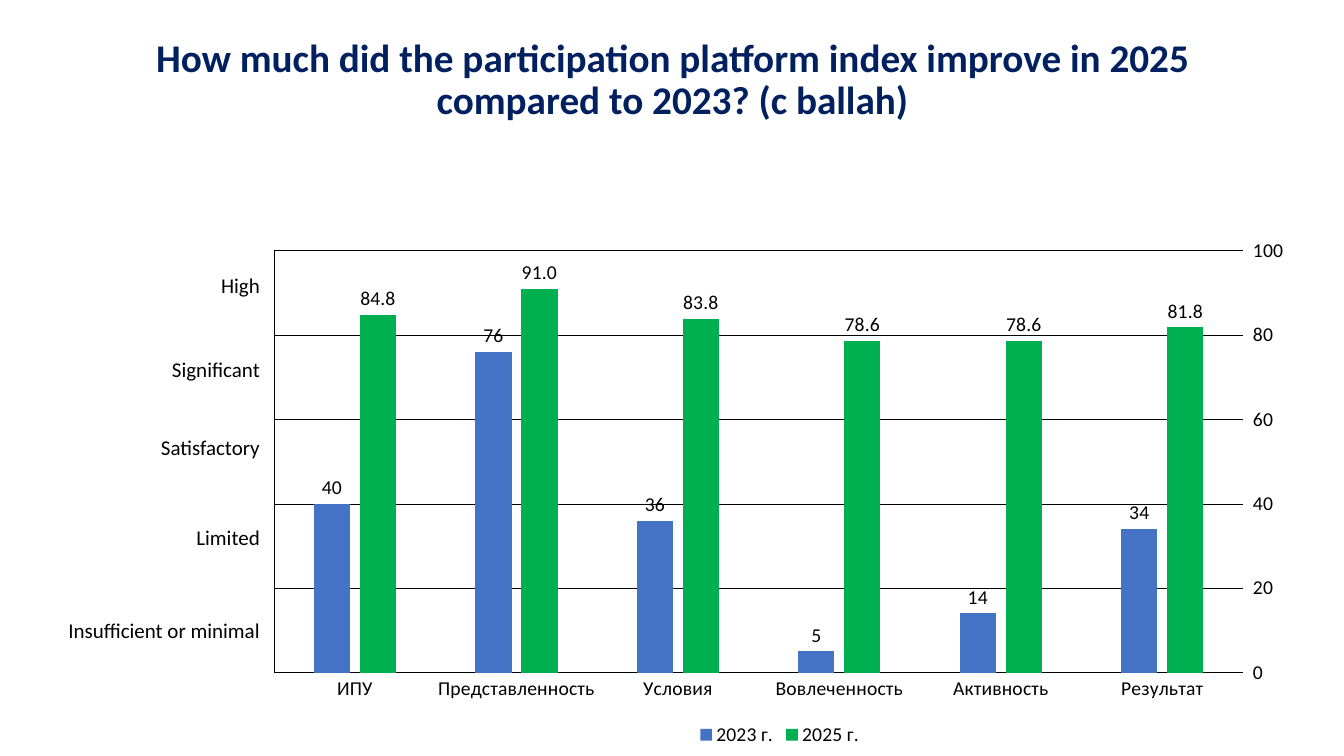
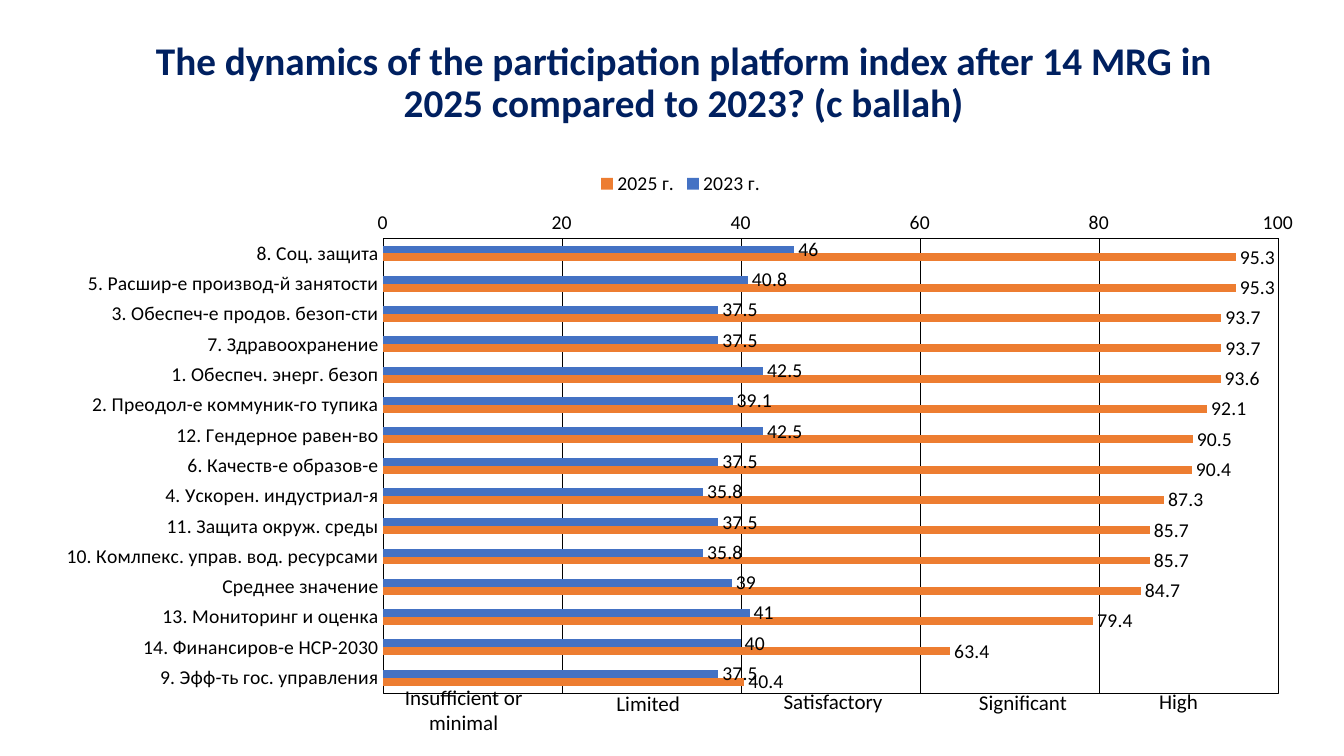
from dataclasses import dataclass

from lxml import etree
from pptx import Presentation
from pptx import util as u
from pptx.chart.data import CategoryChartData
from pptx.dml.color import RGBColor
from pptx.enum import chart as ch, shapes, text
from pptx.oxml import parse_xml
from pptx.oxml.ns import nsdecls, qn


@dataclass(frozen=True)
class Theme:
    font: str = "Calibri"
    title: str = "002060"
    ink: str = "000000"
    paper: str = "FFFFFF"
    blue: str = "4472C4"
    green: str = "00B050"
    orange: str = "ED7D31"
    title_size: int = 28
    band_size: int = 15
    chart_size: int = 14
    hairline: float = 0.25


THEME = Theme()
CENTER, RIGHT, LEFT = text.PP_ALIGN.CENTER, text.PP_ALIGN.RIGHT, text.PP_ALIGN.LEFT
LEVELS = ["Insufficient or minimal", "Limited", "Satisfactory", "Significant", "High"]


def style_font(font, size, color=THEME.ink, bold=False):
    font.name = THEME.font
    font.size = u.Pt(size)
    font.bold = bold
    font.color.rgb = RGBColor.from_string(color)


def write(shape, words, *, size, color=THEME.ink, bold=False, align=CENTER, spacing=None):
    frame = shape.text_frame
    frame.word_wrap = True
    frame.vertical_anchor = text.MSO_ANCHOR.MIDDLE
    paragraph = frame.paragraphs[0]
    paragraph.alignment = align
    paragraph.line_spacing = spacing
    run = paragraph.add_run()
    run.text = words
    style_font(run.font, size, color, bold)


def draw_line(line, width=THEME.hairline):
    line.color.rgb = RGBColor.from_string(THEME.ink)
    line.width = u.Pt(width)


def place_plot(chart, x, y, w, h, framed):
    """Fix the inner plot area as fractions of the chart, on a clear background."""
    plot_area = chart.element.find(".//" + qn("c:plotArea"))
    for old in plot_area.findall(qn("c:layout")):
        plot_area.remove(old)
    layout = etree.Element(qn("c:layout"))
    manual = etree.SubElement(layout, qn("c:manualLayout"))
    settings = dict(layoutTarget="inner", xMode="edge", yMode="edge", x=x, y=y, w=w, h=h)
    for tag, value in settings.items():
        etree.SubElement(manual, qn(f"c:{tag}")).set("val", str(value))
    plot_area.insert(0, layout)

    def clear_box(outline):
        return parse_xml(f'<c:spPr {nsdecls("c", "a")}><a:noFill/>{outline}</c:spPr>')

    no_line = "<a:ln><a:noFill/></a:ln>"
    border = (f'<a:ln w="{u.Pt(THEME.hairline)}"><a:solidFill>'
              f'<a:srgbClr val="{THEME.ink}"/></a:solidFill></a:ln>')
    plot_area.append(clear_box(border if framed else no_line))
    chart.element.find(qn("c:txPr")).addprevious(clear_box(no_line))


class Deck:
    def __init__(self):
        self.prs = Presentation()
        self.prs.slide_width, self.prs.slide_height = u.Cm(33.87), u.Cm(19.05)
        self.slide = None

    def new_slide(self, title, left, top):
        self.slide = self.prs.slides.add_slide(self.prs.slide_layouts[6])
        box = self.slide.shapes.add_textbox(u.Cm(left), u.Cm(top), u.Cm(29.21), u.Cm(3.68))
        write(box, title, size=THEME.title_size, color=THEME.title, bold=True, spacing=0.9)

    def level(self, words, left, top, width, height, align):
        box = self.slide.shapes.add_shape(
            shapes.MSO_SHAPE.RECTANGLE, *map(u.Cm, (left, top, width, height)))
        box.shadow.inherit = False
        box.fill.solid()
        box.fill.fore_color.rgb = RGBColor.from_string(THEME.paper)
        box.line.fill.background()
        write(box, words, size=THEME.band_size, align=align)

    def bars(self, kind, place, categories, series, *, plot_box, gap, overlap=0,
             legend, framed=False):
        """Each series is (name, values, colour, label number format)."""
        data = CategoryChartData()
        data.categories = categories
        for name, values, _, _ in series:
            data.add_series(name, values)
        chart = self.slide.shapes.add_chart(kind, *map(u.Cm, place), data).chart
        chart.has_title = False
        style_font(chart.font, THEME.chart_size)
        chart.has_legend = True
        chart.legend.position = legend
        chart.legend.include_in_layout = False
        style_font(chart.legend.font, THEME.chart_size)

        plot = chart.plots[0]
        plot.gap_width, plot.overlap, plot.vary_by_categories = gap, overlap, False
        for bar, (_, _, color, number_format) in zip(plot.series, series):
            bar.format.fill.solid()
            bar.format.fill.fore_color.rgb = RGBColor.from_string(color)
            labels = bar.data_labels
            labels.show_value = True
            labels.position = ch.XL_LABEL_POSITION.OUTSIDE_END
            labels.number_format = number_format
            labels.number_format_is_linked = False
            style_font(labels.font, THEME.chart_size)

        for axis in (chart.category_axis, chart.value_axis):
            axis.major_tick_mark = axis.minor_tick_mark = ch.XL_TICK_MARK.NONE
            style_font(axis.tick_labels.font, THEME.chart_size)
            draw_line(axis.format.line)
        scale = chart.value_axis
        scale.minimum_scale, scale.maximum_scale, scale.major_unit = 0, 100, 20
        scale.has_major_gridlines = True
        draw_line(scale.major_gridlines.format.line)
        place_plot(chart, *plot_box, framed)
        return chart


def build_index(deck):
    deck.new_slide("How much did the participation platform index improve in 2025 "
                   "compared to 2023? (c ballah)", 2.34, 0.2)
    for words, top in zip(LEVELS, (14.78, 12.45, 10.18, 8.2, 6.1)):
        deck.level(words, 0.93, top, 5.87, 2.18, RIGHT)
    chart = deck.bars(
        ch.XL_CHART_TYPE.COLUMN_CLUSTERED, (6.38, 5.79, 26.54, 13.13),
        ["ИПУ", "Представленность", "Условия", "Вовлеченность", "Активность", "Результат"],
        [("2023 г.", [40, 76, 36, 5, 14, 34], THEME.blue, "General"),
         ("2025 г.", [84.8, 91, 83.8, 78.6, 78.6, 81.8], THEME.green, "0.0")],
        plot_box=(0.02, 0.04, 0.92, 0.81), gap=219, overlap=-27,
        legend=ch.XL_LEGEND_POSITION.BOTTOM)
    chart.value_axis.tick_label_position = ch.XL_TICK_LABEL_POSITION.HIGH
    draw_line(chart.value_axis.format.line, 0.75)


def build_dynamics(deck):
    deck.new_slide("The dynamics of the participation platform index after 14 MRG in 2025 "
                   "compared to 2023? (c ballah)", 2.62, 0.28)
    places = [(9.17, 17.37, 5.03, 1.04), (14.33, 17.4, 4.01, 0.64), (18.34, 17.27, 5.31, 0.81),
              (23.9, 17.2, 3.76, 0.97), (28.96, 17.17, 2.64, 0.97)]
    for words, place in zip(LEVELS, places):
        deck.level(words, *place, LEFT if words == "High" else CENTER)
    scores = [
        ("8. Соц. защита", 46, 95.3),
        ("5. Расшир-е производ-й занятости", 40.8, 95.3),
        ("3. Обеспеч-е продов. безоп-сти", 37.5, 93.7),
        ("7. Здравоохранение", 37.5, 93.7),
        ("1. Обеспеч. энерг. безоп", 42.5, 93.6),
        ("2. Преодол-е коммуник-го тупика", 39.1, 92.1),
        ("12. Гендерное равен-во", 42.5, 90.5),
        ("6. Качеств-е образов-е", 37.5, 90.4),
        ("4. Ускорен. индустриал-я", 35.8, 87.3),
        ("11. Защита окруж. среды", 37.5, 85.7),
        ("10. Комлпекс. управ. вод. ресурсами", 35.8, 85.7),
        ("Среднее значение", 39, 84.7),
        ("13. Мониторинг и оценка", 41, 79.4),
        ("14. Финансиров-е НСР-2030", 40, 63.4),
        ("9. Эфф-ть гос. управления", 37.5, 40.4),
    ]
    groups, before, after = zip(*scores)
    chart = deck.bars(
        ch.XL_CHART_TYPE.BAR_CLUSTERED, (1.04, 4.04, 32.23, 13.67), groups,
        [("2023 г.", before, THEME.blue, "General"),
         ("2025 г.", after, THEME.orange, "General")],
        plot_box=(0.267, 0.144, 0.7, 0.838), gap=182,
        legend=ch.XL_LEGEND_POSITION.TOP, framed=True)
    chart.category_axis.reverse_order = True
    chart.value_axis.format.line.fill.background()


def main():
    deck = Deck()
    build_index(deck)
    build_dynamics(deck)
    deck.prs.save("out.pptx")


if __name__ == "__main__":
    main()
